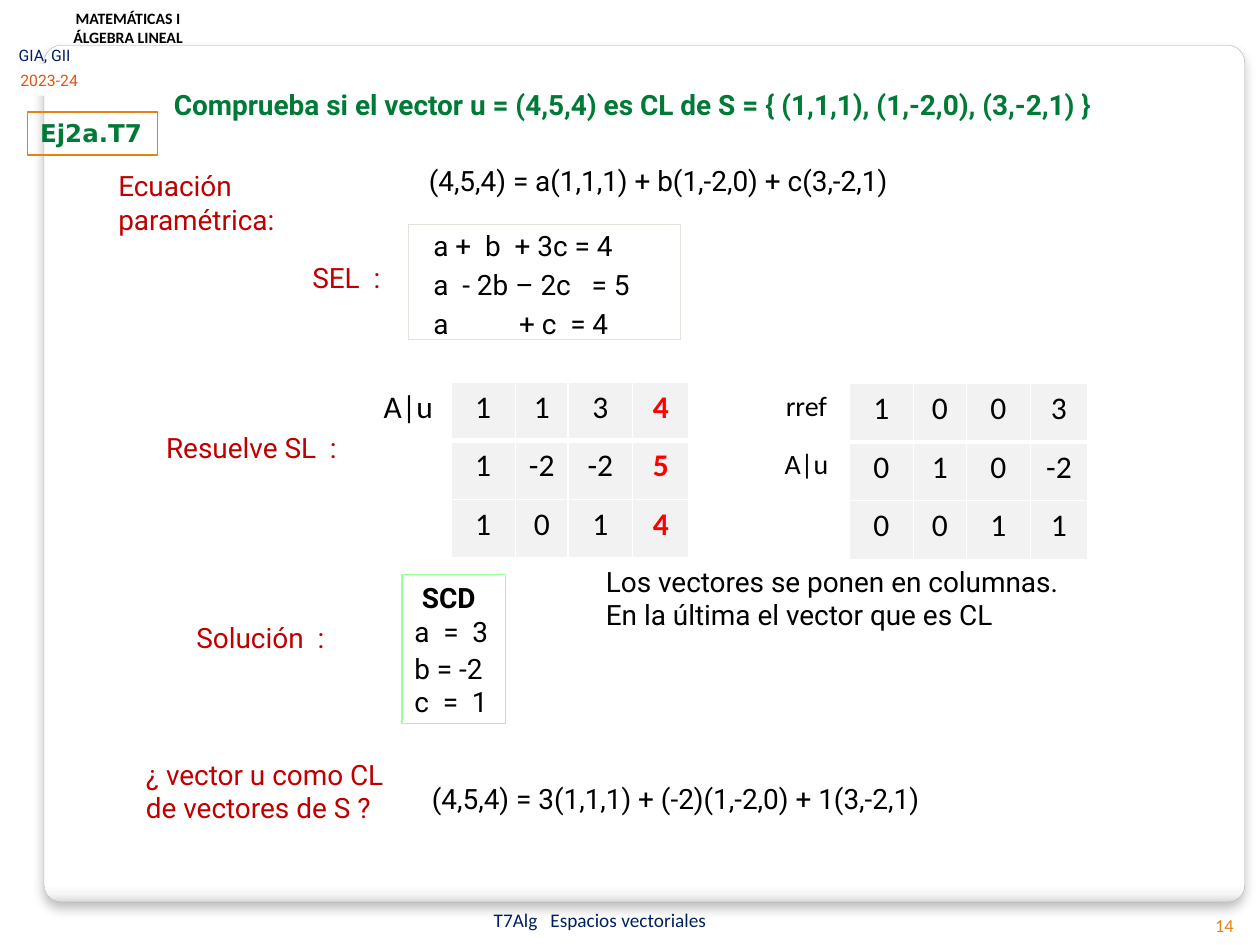
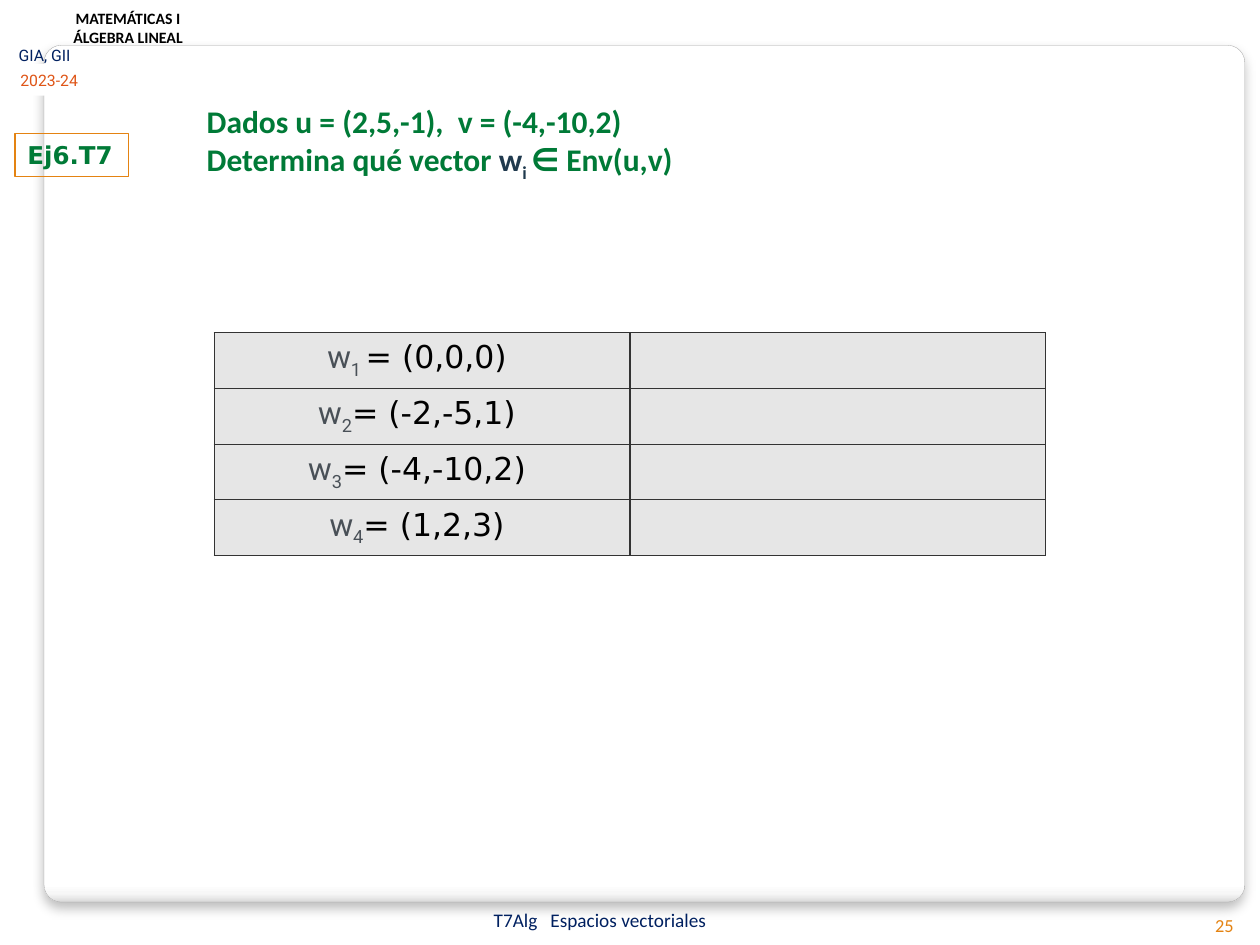
from lxml import etree
from pptx import Presentation
from pptx.dml.color import RGBColor
from pptx.enum.shapes import MSO_SHAPE
from pptx.enum.text import MSO_ANCHOR, MSO_AUTO_SIZE, PP_ALIGN
from pptx.oxml import parse_xml
from pptx.oxml.ns import qn
from pptx.util import Inches, Pt

LEFT, MID, RIGHT = PP_ALIGN.LEFT, PP_ALIGN.CENTER, PP_ALIGN.RIGHT
TOP, HALF = MSO_ANCHOR.TOP, MSO_ANCHOR.MIDDLE
RECT, ROUND = MSO_SHAPE.RECTANGLE, MSO_SHAPE.ROUNDED_RECTANGLE
NS = 'xmlns:a="http://schemas.openxmlformats.org/drawingml/2006/main"'

HEX = {
    "white": "FFFFFF", "black": "000000", "navy": "002060", "rust": "DF5517",
    "green": "007A37", "crimson": "C00000", "red": "FF0000", "orange": "E48312",
    "slate": "495057", "ink": "203A4E", "pale": "F2F2F2", "ash": "E6E6E6",
    "dark": "333333", "rim": "A4A4A4", "sage": "E0E4DB", "mint": "99FF99",
}

# The slide is a grid of 100 columns by 75 rows.
WIDE, HIGH = Inches(10), Inches(7.5)
COL, ROW = WIDE / 100, HIGH / 75
PAGE = (0, 0, 100, 75)


def style(size, name, color, **more):
    return {"size": Pt(size), "name": name, "color": color, **more}


BODY = style(16, "Roboto", "black")
LABEL = style(16, "Roboto", "crimson")
HEAD = style(16, "Roboto", "green", bold=True)
HEAD2 = style(18, "Calibri", "green", bold=True)
TAG = style(14, "DejaVu Sans", "green", bold=True)
CELL = style(18, "Calibri", "black")
SIDE = style(16, "Calibri", "black")
GOAL = {**CELL, "color": "red", "bold": True}
NAME = style(18, "Roboto", "slate")
VALUE = style(18, "DejaVu Sans", "black")


def rgb(key):
    return RGBColor.from_string(HEX[key])


def spot(box, x, y, w, h):
    """Turn a place inside a box of the grid into slide lengths."""
    return (round((box[0] + x) * COL), round((box[1] + y) * ROW),
            round(w * COL), round(h * ROW))


def dress(run, look):
    for key, val in look.items():
        if key == "color":
            run.font.color.rgb = rgb(val)
        elif key == "base":
            run.font._element.set("baseline", str(val * 1000))
        else:
            setattr(run.font, key, val)


def write(frame, lines, look, align=LEFT):
    """Fill a text frame; a line is a string or a list of (text, look)."""
    for i, line in enumerate(lines):
        para = frame.paragraphs[0] if i == 0 else frame.add_paragraph()
        para.alignment = align
        for text, own in [(line, look)] if isinstance(line, str) else line:
            run = para.add_run()
            run.text = text
            dress(run, own)


def lay(frame, anchor=TOP, wrap=True, **pads):
    frame.auto_size = MSO_AUTO_SIZE.NONE
    frame.word_wrap, frame.vertical_anchor = wrap, anchor
    for side, val in pads.items():
        setattr(frame, "margin_" + side, Inches(val))


def tab(para, pos):
    stops = etree.SubElement(para._p.get_or_add_pPr(), qn("a:tabLst"))
    etree.SubElement(stops, qn("a:tab"), pos=str(Inches(pos)), algn="l")


def note(slide, place, lines, look, align=LEFT, **form):
    frame = slide.shapes.add_textbox(*place).text_frame
    lay(frame, **form)
    write(frame, lines, look, align)
    return frame


def block(slide, place, kind=RECT, fill=None, edge=None, thick=0.75):
    shape = slide.shapes.add_shape(kind, *place)
    shape.shadow.inherit = False
    for part, key in ((shape.fill, fill), (shape.line.fill, edge)):
        if key:
            part.solid()
            part.fore_color.rgb = rgb(key)
        else:
            part.background()
    if edge:
        shape.line.width = Pt(thick)
    return shape


def panel(slide, place, lines, look, align=LEFT, form=None, **paint):
    """Draw a rectangle that holds text."""
    frame = block(slide, place, **paint).text_frame
    lay(frame, **(form or {}))
    write(frame, lines, look, align)
    return frame


def sheet(slide, place):
    """Draw the rounded page with its shaded foot and soft shadow."""
    shape = block(slide, place, ROUND, edge="rim", thick=0.16)
    shape.adjustments[0] = 0.02
    shape.fill.gradient()
    shape.fill.gradient_angle = 270
    props = shape._element.spPr
    stops = props.find(".//" + qn("a:gsLst"))
    for stop in list(stops):
        stops.remove(stop)
    for pos, tint in ((0, "FFFFFF"), (98, "FFFFFF"), (99, "F7F7F7"), (100, "DADADA")):
        stops.append(parse_xml(
            f'<a:gs {NS} pos="{pos * 1000}"><a:srgbClr val="{tint}"/></a:gs>'))
    props.find(qn("a:effectLst")).append(parse_xml(
        f'<a:outerShdw {NS} blurRad="{Pt(6)}" dist="{Pt(4)}" dir="5400000" '
        'algn="t" rotWithShape="0"><a:srgbClr val="000000">'
        '<a:alpha val="25000"/></a:srgbClr></a:outerShdw>'))


def base(slide, box, page):
    """Place the page, the course header and the footer."""
    sheet(slide, spot(box, 3.5, 3.6, 95.3, 68))
    pads = dict.fromkeys(("left", "top", "right", "bottom"), 0.1)
    note(slide, spot(box, 0.5, 2.6, 12.6, 3.5), ["GIA, GII"],
         style(9, "Roboto", "navy"), **pads)
    note(slide, spot(box, 1.4, -0.3, 17.5, 5), ["MATEMÁTICAS I", "ÁLGEBRA LINEAL"],
         style(9, "Calibri", "black", bold=True), MID, anchor=HALF, **pads)
    foot = note(slide, spot(box, 38.2, 71.6, 21.3, 2.7), [], BODY)
    tab(foot.paragraphs[0], 0.45)
    write(foot, ["T7Alg\tEspacios vectoriales"], style(11, "Calibri", "navy"))
    panel(slide, spot(box, 0.4, 5.1, 7, 2.5), ["2023-24"],
          style(9, "Roboto", "rust"), MID, {"wrap": False}, fill="white")
    note(slide, spot(box, 88.1, 71.4, 10.8, 4), [page],
         style(10.5, "Calibri", "orange"), RIGHT, anchor=HALF)


def title(slide, place, lines, look, anchor):
    shape = slide.shapes.title
    shape.left, shape.top, shape.width, shape.height = place
    lay(shape.text_frame, anchor)
    write(shape.text_frame, lines, look)
    slide.shapes._spTree.append(shape._element)  # bring above the page


def badge(slide, place, text):
    panel(slide, place, [text], TAG, form={"wrap": False}, edge="orange")


def rule(cell, edge, widths):
    """Draw the left, right, top and bottom borders of a cell."""
    props = cell._tc.get_or_add_tcPr()
    for i, (side, width) in enumerate(zip("LRTB", widths)):
        props.insert(i, parse_xml(
            f'<a:ln{side} {NS} w="{Pt(width)}"><a:solidFill>'
            f'<a:srgbClr val="{HEX[edge]}"/></a:solidFill></a:ln{side}>'))


def table(slide, place, cols, rows, edge, paint):
    """Build a table; paint(cell, value, row, column) fills each cell."""
    grid = slide.shapes.add_table(len(rows), len(cols), *place).table
    for part, width in zip(grid.columns, cols):
        part.width = round(width * COL)
    for r, row in enumerate(rows):
        grid.rows[r].height = round(place[3] / len(rows))
        for c, value in enumerate(row):
            cell = grid.cell(r, c)
            key, widths = paint(cell, value, r, c)
            cell.fill.solid()
            cell.fill.fore_color.rgb = rgb(key)
            rule(cell, edge, widths)


def matrix(slide, box, rows, side, last):
    """Show a matrix with its name in the first column."""
    def paint(cell, value, r, c):
        look = side if c == 0 else last if c == 4 else CELL
        if value:
            write(cell.text_frame, [value], look, MID)
        low = 3 if r == 0 else 1
        high = 3 if r == 1 else 1
        return "pale" if c else "white", (1, 1, high, low)

    table(slide, spot(box, 0, 0, *box[2:]), (6.8, 5.1, 4.2, 5.1, 4.5),
          [row.split(",") for row in rows], "white", paint)


def setup(slide, box):
    """State the parametric equation and its linear system."""
    note(slide, spot(box, 0, 0.4, 22.9, 6.4), ["Ecuación paramétrica:"], LABEL)
    note(slide, spot(box, 17.2, 0, 53.3, 3.7),
         ["(4,5,4) = a(1,1,1) + b(1,-2,0) + c(3,-2,1)"], BODY, MID)
    note(slide, spot(box, 15.4, 7.7, 8.1, 3.7), ["SEL  :"], LABEL, wrap=False)
    system = panel(slide, spot(box, 24, 5.3, 21.6, 9.1),
                   ["a +  b  + 3c = 4", "a  - 2b – 2c   = 5", "a\t+ c  = 4"], BODY,
                   form={"anchor": HALF, "left": 0.2}, edge="sage", thick=0.25)
    for para in system.paragraphs:
        para.line_spacing = 1.17
    tab(system.paragraphs[2], 0.68)


def solve(slide, box):
    """Reduce the matrix and read the solution."""
    note(slide, spot(box, 0, 3.4, 16, 3.7), ["Resuelve SL  :"], LABEL, wrap=False)
    matrix(slide, (box[0] + 16.8, box[1], 25.7, 14),
           ["A|u,1,1,3,4", ",1,-2,-2,5", ",1,0,1,4"], CELL, GOAL)
    matrix(slide, (box[0] + 48.4, box[1] + 0.1, 25.7, 14),
           ["rref,1,0,0,3", "A|u,0,1,0,-2", ",0,0,1,1"], SIDE, CELL)
    note(slide, spot(box, 34.9, 14, 39.1, 6.4),
         ["Los vectores se ponen en columnas. En la última el vector que es CL"], BODY)
    note(slide, spot(box, 2.4, 18.5, 16.7, 3.7), ["Solución  :"], LABEL)
    found = panel(slide, spot(box, 19.7, 15.3, 8.2, 11.8),
                  [[("SCD", {**BODY, "bold": True})], "a  =  3", "b = -2", "c  =  1"],
                  BODY, form={"wrap": False}, edge="mint")
    found.paragraphs[0]._p.get_or_add_pPr().set("marL", str(Inches(0.06)))
    found.paragraphs[2].space_before = Pt(2)


def answer(slide, box):
    note(slide, spot(box, 0, 0, 22.1, 6.4),
         ["¿ vector u como CL", "de vectores de S ?"], LABEL)
    note(slide, spot(box, 22.7, 1.9, 50, 3.7),
         ["(4,5,4) = 3(1,1,1) + (-2)(1,-2,0) + 1(3,-2,1)"], BODY)


def choices(slide, box):
    """List the candidate vectors beside empty cells for the answers."""
    def paint(cell, value, r, c):
        cell.vertical_anchor = HALF
        if value:
            cell.margin_right = Inches(0.18)
            mark, text = value
            write(cell.text_frame, [[("w", NAME), (mark, {**NAME, "base": -25}),
                                     (text, VALUE)]], NAME, MID)
        return "ash", (0.75,) * 4

    items = [("1 ", "= (0,0,0)"), ("2", "= (-2,-5,1)"),
             ("3", "= (-4,-10,2)"), ("4", "= (1,2,3)")]
    table(slide, spot(box, 0, 0, *box[2:]), (box[2] / 2,) * 2,
          [(item, None) for item in items], "dark", paint)


def check(slide):
    """Slide that tests whether u is a combination of S."""
    base(slide, PAGE, "14")
    title(slide, spot(PAGE, 12.8, 6.4, 85, 3.7),
          ["Comprueba si el vector u = (4,5,4) es CL de S = "
           "{ (1,1,1), (1,-2,0), (3,-2,1) }"], HEAD, HALF)
    badge(slide, spot(PAGE, 2.2, 8.9, 10.3, 3.4), "Ej2a.T7")
    setup(slide, (8.4, 12.5, 80, 15))
    solve(slide, (12.2, 30.3, 75, 28))
    answer(slide, (10.6, 59.6, 75, 7))


def span(slide):
    """Slide that asks which vectors lie in the span of u and v."""
    base(slide, PAGE, "25")
    title(slide, spot(PAGE, 15.4, 7.6, 63, 7.1),
          ["Dados u = (2,5,-1),  v = (-4,-10,2)",
           [("Determina qué vector ", HEAD2), ("w", {**HEAD2, "color": "ink"}),
            ("i ", {**HEAD2, "color": "ink", "base": -25}),
            ("∈ Env(u,v)", HEAD2)]], HEAD2, TOP)
    badge(slide, spot(PAGE, 1.2, 10.6, 9, 3.4), "Ej6.T7")
    choices(slide, (17, 26.4, 66, 17.7))


def main():
    deck = Presentation()
    deck.slide_width, deck.slide_height = WIDE, HIGH
    for draw in (check, span):
        draw(deck.slides.add_slide(deck.slide_layouts[5]))
    deck.save("out.pptx")


if __name__ == "__main__":
    main()
